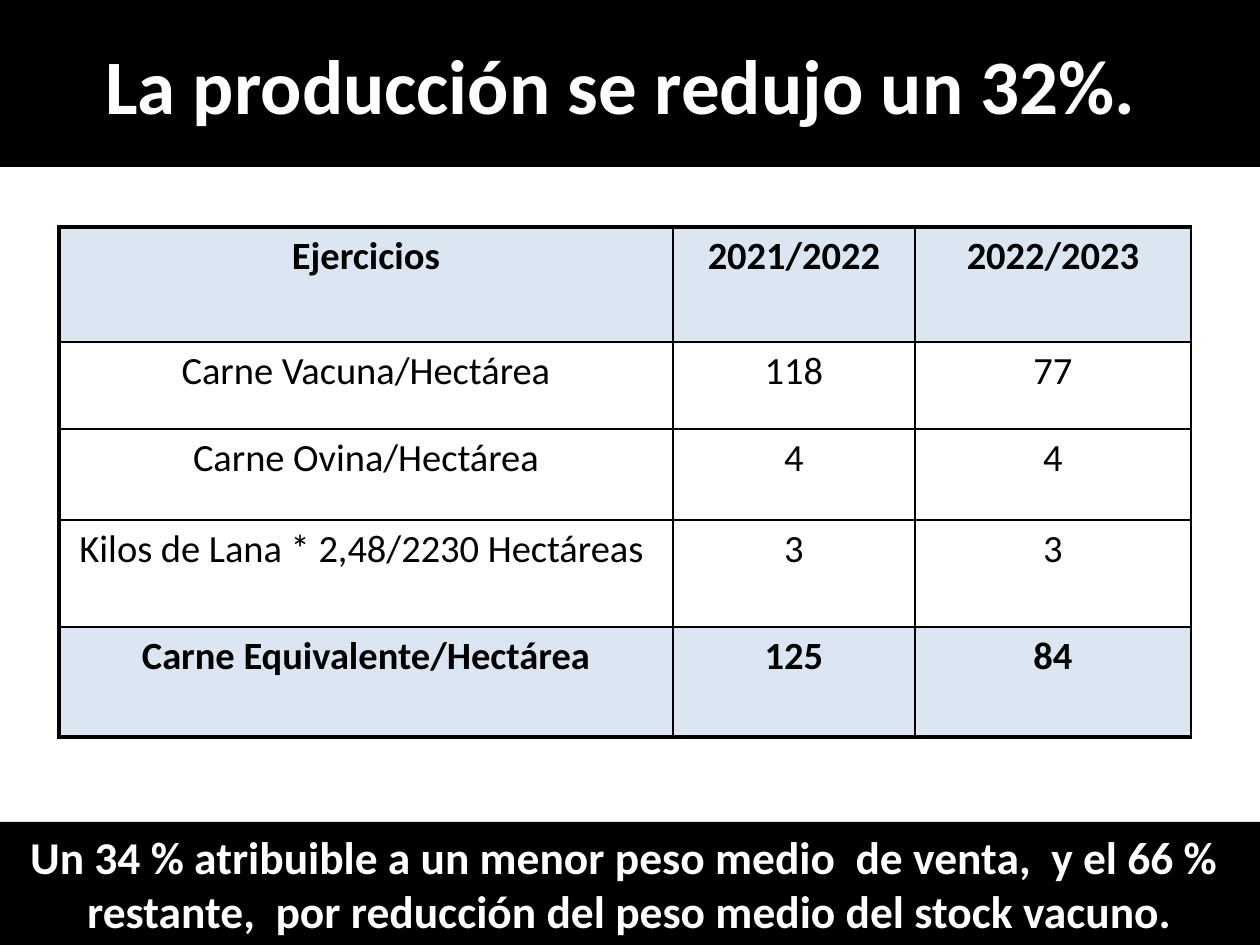
import pptx
import pptx.util
import pptx.dml.color
import pptx.enum.shapes
import pptx.enum.text
import pptx.oxml
import pptx.oxml.ns

BLACK = pptx.dml.color.RGBColor(0x00, 0x00, 0x00)
WHITE = pptx.dml.color.RGBColor(0xFF, 0xFF, 0xFF)
PALE_BLUE = pptx.dml.color.RGBColor(0xDC, 0xE6, 0xF2)
FONT = "Calibri"
PX_PER_INCH = 126
THIN, THICK = 1, 2.25

PRODUCTION = [
    ("Ejercicios", "2021/2022", "2022/2023"),
    ("Carne Vacuna/Hectárea", "118", "77"),
    ("Carne Ovina/Hectárea", "4", "4"),
    ("Kilos de Lana * 2,48/2230 Hectáreas ", "3", "3"),
    ("Carne Equivalente/Hectárea", "125", "84"),
]
COLUMN_WIDTHS = (614, 242, 276)
ROW_HEIGHTS = (115, 87, 91, 107, 110)


def px(length):
    return pptx.util.Emu(round(length * 914400 / PX_PER_INCH))


def write(frame, text, size, color=BLACK, bold=False):
    paragraph = frame.paragraphs[0]
    paragraph.alignment = pptx.enum.text.PP_ALIGN.CENTER
    run = paragraph.add_run()
    run.text = text
    run.font.name = FONT
    run.font.size = pptx.util.Pt(size)
    run.font.bold = bold
    run.font.color.rgb = color


def add_band(slide, box, text, size):
    """Black full-width band with centred white text."""
    band = slide.shapes.add_shape(
        pptx.enum.shapes.MSO_SHAPE.RECTANGLE, *map(px, box))
    band.shadow.inherit = False
    band.fill.solid()
    band.fill.fore_color.rgb = BLACK
    band.line.fill.background()
    band.text_frame.word_wrap = True
    band.text_frame.vertical_anchor = pptx.enum.text.MSO_ANCHOR.MIDDLE
    write(band.text_frame, text, size, color=WHITE, bold=True)


def set_borders(cell, **widths):
    """Draw black borders; keys are the sides L, R, T, B in schema order."""
    properties = cell._tc.get_or_add_tcPr()
    for side, width in widths.items():
        properties.append(pptx.oxml.parse_xml(
            f'<a:ln{side} {pptx.oxml.ns.nsdecls("a")} w="{pptx.util.Pt(width)}">'
            f'<a:solidFill><a:srgbClr val="{BLACK}"/></a:solidFill></a:ln{side}>'))


def add_production_table(slide, left, top):
    last_row = len(PRODUCTION) - 1
    table = slide.shapes.add_table(
        len(PRODUCTION), len(COLUMN_WIDTHS), px(left), px(top),
        px(sum(COLUMN_WIDTHS)), px(sum(ROW_HEIGHTS))).table
    table.horz_banding = False
    for column, width in zip(table.columns, COLUMN_WIDTHS):
        column.width = px(width)
    for row, height in zip(table.rows, ROW_HEIGHTS):
        row.height = px(height)

    for r, values in enumerate(PRODUCTION):
        emphasized = r in (0, last_row)
        for c, value in enumerate(values):
            cell = table.cell(r, c)
            write(cell.text_frame, value, 22, bold=emphasized)
            set_borders(cell,
                        L=THICK if c == 0 else THIN,
                        R=THIN,
                        T=THICK if r == 0 else THIN,
                        B=THICK if r == last_row else THIN)
            if emphasized:
                cell.fill.solid()
                cell.fill.fore_color.rgb = PALE_BLUE
            else:
                cell.fill.background()


def main():
    presentation = pptx.Presentation()
    presentation.slide_width = px(1260)
    presentation.slide_height = px(945)
    slide = presentation.slides.add_slide(presentation.slide_layouts[6])
    add_band(slide, (0, 0, 1260, 167), "La producción se redujo un 32%. ", 44)
    add_production_table(slide, 59, 227)
    add_band(slide, (0, 822, 1260, 123),
             "Un 34 % atribuible a un menor peso medio  de venta,  y el 66 %  "
             "restante,  por reducción del peso medio del stock vacuno.", 26)
    presentation.save("out.pptx")


if __name__ == "__main__":
    main()
